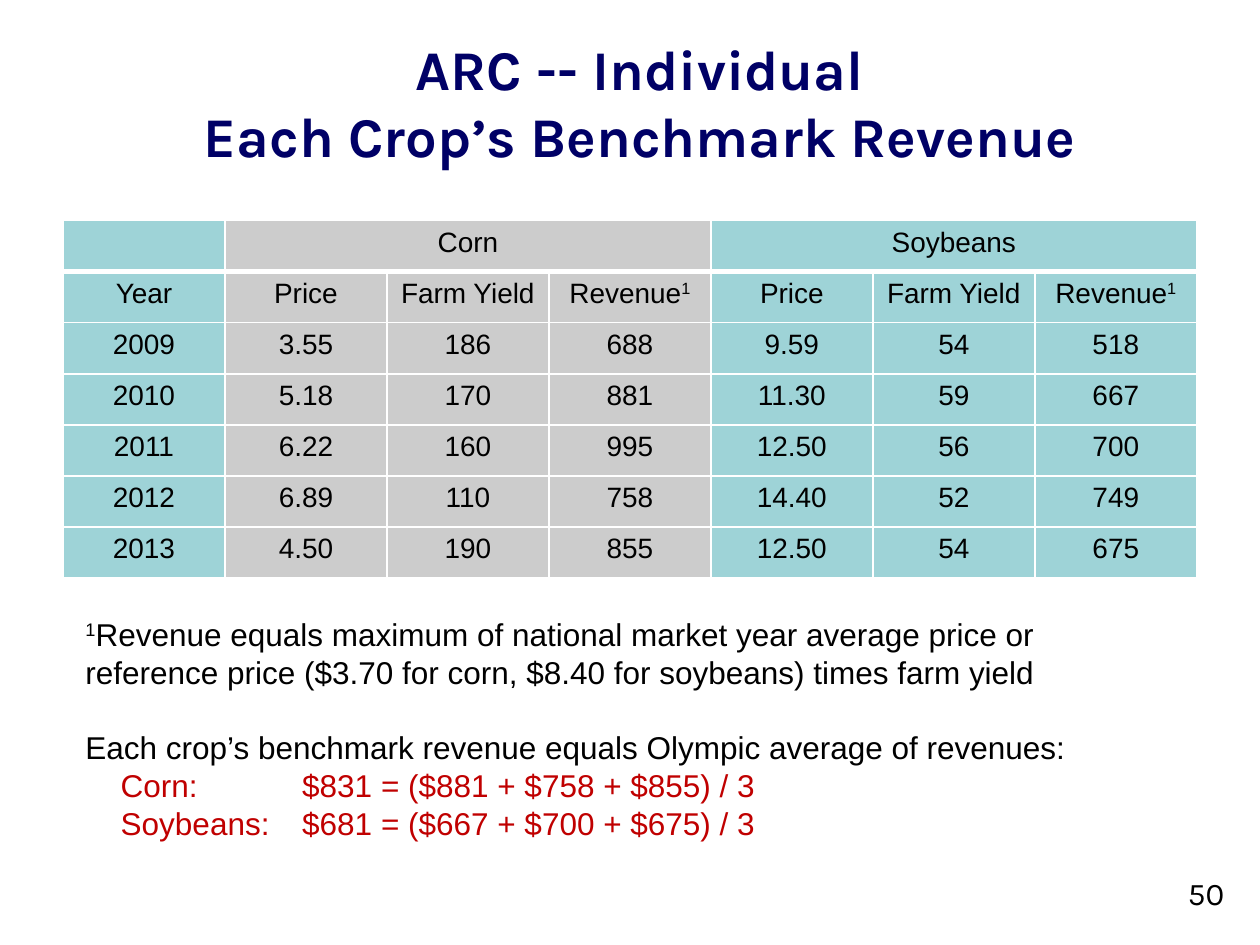
from dataclasses import dataclass

from lxml import etree
from pptx import Presentation
from pptx import util as u
from pptx.dml.color import RGBColor
from pptx.enum import text
from pptx.oxml.ns import qn


@dataclass(frozen=True)
class Theme:
    navy: str = "000066"
    black: str = "000000"
    red: str = "C00000"
    white: str = "FFFFFF"
    teal: str = "9ED3D7"
    grey: str = "CCCCCC"
    display: str = "Karla"
    body: str = "Arial"
    title_size: int = 32
    note_size: int = 18
    table_size: int = 16
    note_leading: float = 21.6


class SlideWriter:
    def __init__(self, slide, theme):
        self.slide = slide
        self.theme = theme

    def box(self, left, top, width, height, anchor=text.MSO_ANCHOR.TOP):
        frame = self.slide.shapes.add_textbox(
            u.Inches(left), u.Inches(top), u.Inches(width), u.Inches(height)
        ).text_frame
        frame.word_wrap = True
        frame.vertical_anchor = anchor
        return frame

    def run(self, paragraph, words, size, color, font, bold=False, raised=False):
        run = paragraph.add_run()
        run.text = words
        run.font.size = u.Pt(size)
        run.font.name = font
        run.font.bold = bold
        run.font.color.rgb = RGBColor.from_string(color)
        if raised:
            run.font._element.set("baseline", "30000")

    def title(self, lines):
        t = self.theme
        heading = self.box(0.58, 0.33, 9, 0.95, text.MSO_ANCHOR.MIDDLE).paragraphs[0]
        heading.alignment = text.PP_ALIGN.CENTER
        for index, line in enumerate(lines):
            if index:
                heading.add_line_break()
            self.run(heading, line, t.title_size, t.navy, t.display, bold=True)

    def note(self, paragraph, words, color=None, raised=False):
        t = self.theme
        paragraph.line_spacing = u.Pt(t.note_leading)
        self.run(paragraph, words, t.note_size, color or t.black, t.body, raised=raised)

    def calculation(self, paragraph, crop, working):
        """Hang the working at a common position after the crop name."""
        properties = paragraph._p.get_or_add_pPr()
        properties.set("marL", str(u.Inches(1.72)))
        properties.set("indent", str(u.Inches(-1.44)))
        self.note(paragraph, f"{crop}:\t{working}", self.theme.red)

    def page_number(self, number):
        t = self.theme
        page = self.box(9.33, 6.89, 0.58, 0.52).paragraphs[0]
        self.run(page, number, t.note_size, t.black, t.display)

    def borders(self, cell, bottom):
        properties = cell._tc.get_or_add_tcPr()
        widths = {"a:lnL": 1, "a:lnR": 1, "a:lnT": 1, "a:lnB": bottom}
        for index, (side, points) in enumerate(widths.items()):
            line = etree.Element(qn(side), w=str(u.Pt(points)))
            fill = etree.SubElement(line, qn("a:solidFill"))
            etree.SubElement(fill, qn("a:srgbClr"), val=self.theme.white)
            properties.insert(index, line)

    def cell(self, cell, words, fill, bottom=1):
        t = self.theme
        cell.fill.solid()
        cell.fill.fore_color.rgb = RGBColor.from_string(fill)
        self.borders(cell, bottom)
        paragraph = cell.text_frame.paragraphs[0]
        paragraph.alignment = text.PP_ALIGN.CENTER
        label, _, mark = words.partition("^")
        if label:
            self.run(paragraph, label, t.table_size, t.black, t.body)
        if mark:
            self.run(paragraph, mark, t.table_size, t.black, t.body, raised=True)

    def crop_table(self, rows):
        """Fill the grid; "^" in a cell marks the start of a superscript."""
        t = self.theme
        table = self.slide.shapes.add_table(
            len(rows), len(rows[0]),
            u.Inches(0.5), u.Inches(1.75), u.Inches(9), u.Inches(2.84),
        ).table
        table.first_row = table.horz_banding = False
        for r, row in enumerate(rows):
            for c, words in enumerate(row):
                fill = t.grey if 1 <= c <= 3 else t.teal
                self.cell(table.cell(r, c), words, fill, bottom=1 if r else 3)
        for first in (1, 4):
            table.cell(0, first).merge(table.cell(0, first + 2))


MEASURES = ["Price", "Farm Yield", "Revenue^1"]
ROWS = [
    ["", "Corn", "", "", "Soybeans", "", ""],
    ["Year", *MEASURES, *MEASURES],
    ["2009", "3.55", "186", "688", "9.59", "54", "518"],
    ["2010", "5.18", "170", "881", "11.30", "59", "667"],
    ["2011", "6.22", "160", "995", "12.50", "56", "700"],
    ["2012", "6.89", "110", "758", "14.40", "52", "749"],
    ["2013", "4.50", "190", "855", "12.50", "54", "675"],
]
BENCHMARKS = [
    ("Corn", "$831 = ($881 + $758 + $855) / 3"),
    ("Soybeans", "$681 = ($667 + $700 + $675) / 3"),
]


def main():
    deck = Presentation()
    deck.slide_width, deck.slide_height = u.Inches(10), u.Inches(7.5)
    theme = Theme()
    writer = SlideWriter(deck.slides.add_slide(deck.slide_layouts[6]), theme)

    writer.title(["ARC -- Individual", "Each Crop’s Benchmark Revenue"])
    writer.crop_table(ROWS)

    notes = writer.box(0.58, 4.83, 8.75, 1.92)
    footnote = notes.paragraphs[0]
    writer.note(footnote, "1", raised=True)
    writer.note(
        footnote,
        "Revenue equals maximum of national market year average price or "
        "reference price ($3.70 for corn, $8.40 for soybeans) times farm yield",
    )
    rule = notes.add_paragraph()
    rule.space_before = u.Pt(theme.note_leading)
    writer.note(rule, "Each crop’s benchmark revenue equals Olympic average of revenues:")
    for crop, working in BENCHMARKS:
        writer.calculation(notes.add_paragraph(), crop, working)

    writer.page_number("50")
    deck.save("out.pptx")


if __name__ == "__main__":
    main()
